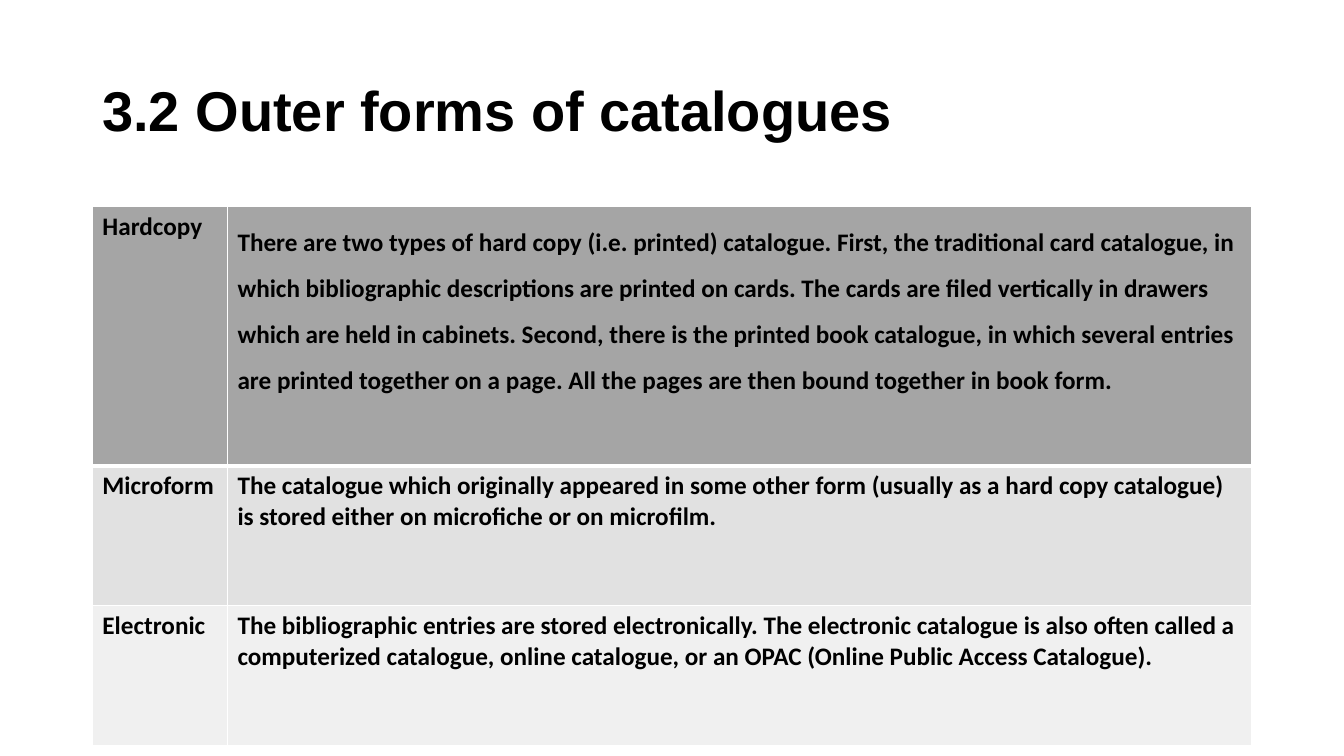
"""Build a slide with a table of the outer forms of library catalogues."""
from lxml import etree
from pptx import Presentation
from pptx.dml.color import RGBColor
from pptx.enum.text import MSO_ANCHOR
from pptx.oxml.ns import qn
from pptx.util import Pt

MIDDLE = MSO_ANCHOR.MIDDLE
COLORS = {"text": "000000", "border": "FFFFFF", "header": "A5A5A5",
          "band": "E1E1E1", "plain": "F0F0F0"}
TITLE_FORMAT = {"name": "Arial", "size": Pt(40), "bold": True}
CELL_FORMAT = {"name": "Calibri", "size": Pt(18), "bold": True}
LEFT, WIDTH = 66, 828
COLUMN_WIDTHS = [96.5, 731.5]
ROWS = [
    ("header", 185, 1.5, "Hardcopy",
     "There are two types of hard copy (i.e. printed) catalogue. First, the "
     "traditional card catalogue, in which bibliographic descriptions are "
     "printed on cards. The cards are filed vertically in drawers which are "
     "held in cabinets. Second, there is the printed book catalogue, in which "
     "several entries are printed together on a page. All the pages are then "
     "bound together in book form."),
    ("band", 100, 1, "Microform",
     "The catalogue which originally appeared in some other form (usually as "
     "a hard copy catalogue) is stored either on microfiche or on microfilm."),
    ("plain", 100, 1, "Electronic",
     "The bibliographic entries are stored electronically. The electronic "
     "catalogue is also often called a computerized catalogue, online "
     "catalogue, or an OPAC (Online Public Access Catalogue)."),
]


def write(para, text, formats, spacing):
    para.line_spacing = spacing
    span = para.add_run()
    span.text = text
    for name, value in formats.items():
        setattr(span.font, name, value)
    span.font.color.rgb = RGBColor.from_string(COLORS["text"])


def add_border(cell, side, width):
    properties = cell._tc.get_or_add_tcPr()
    line = etree.SubElement(properties, qn(f"a:ln{side}"), w=str(Pt(width)))
    fill = etree.SubElement(line, qn("a:solidFill"))
    etree.SubElement(fill, qn("a:srgbClr"), val=COLORS["border"])


deck = Presentation()
deck.slide_width, deck.slide_height = Pt(960), Pt(540)
page = deck.slides.add_slide(deck.slide_layouts[6])

title = page.shapes.add_textbox(Pt(LEFT), Pt(28.75), Pt(WIDTH), Pt(104.4))
title.text_frame.word_wrap = True
title.text_frame.vertical_anchor = MIDDLE
write(title.text_frame.paragraphs[0], "3.2 Outer forms of catalogues",
      TITLE_FORMAT, 0.9)

table_height = sum(row[1] for row in ROWS)
table = page.shapes.add_table(len(ROWS), len(COLUMN_WIDTHS), Pt(LEFT), Pt(147.75),
                              Pt(WIDTH), Pt(table_height)).table
for column, width in zip(table.columns, COLUMN_WIDTHS):
    column.width = Pt(width)

for row_index, (shade, height, spacing, form, description) in enumerate(ROWS):
    table.rows[row_index].height = Pt(height)
    widths = {"L": 1, "R": 1, "T": 3 if row_index == 1 else 1,
              "B": 3 if row_index == 0 else 1}
    for column_index, (text, leading) in enumerate([(form, 1), (description, spacing)]):
        cell = table.cell(row_index, column_index)
        write(cell.text_frame.paragraphs[0], text, CELL_FORMAT, leading)
        for side, width in widths.items():
            add_border(cell, side, width)
        cell.fill.solid()
        cell.fill.fore_color.rgb = RGBColor.from_string(COLORS[shade])

deck.save("out.pptx")
